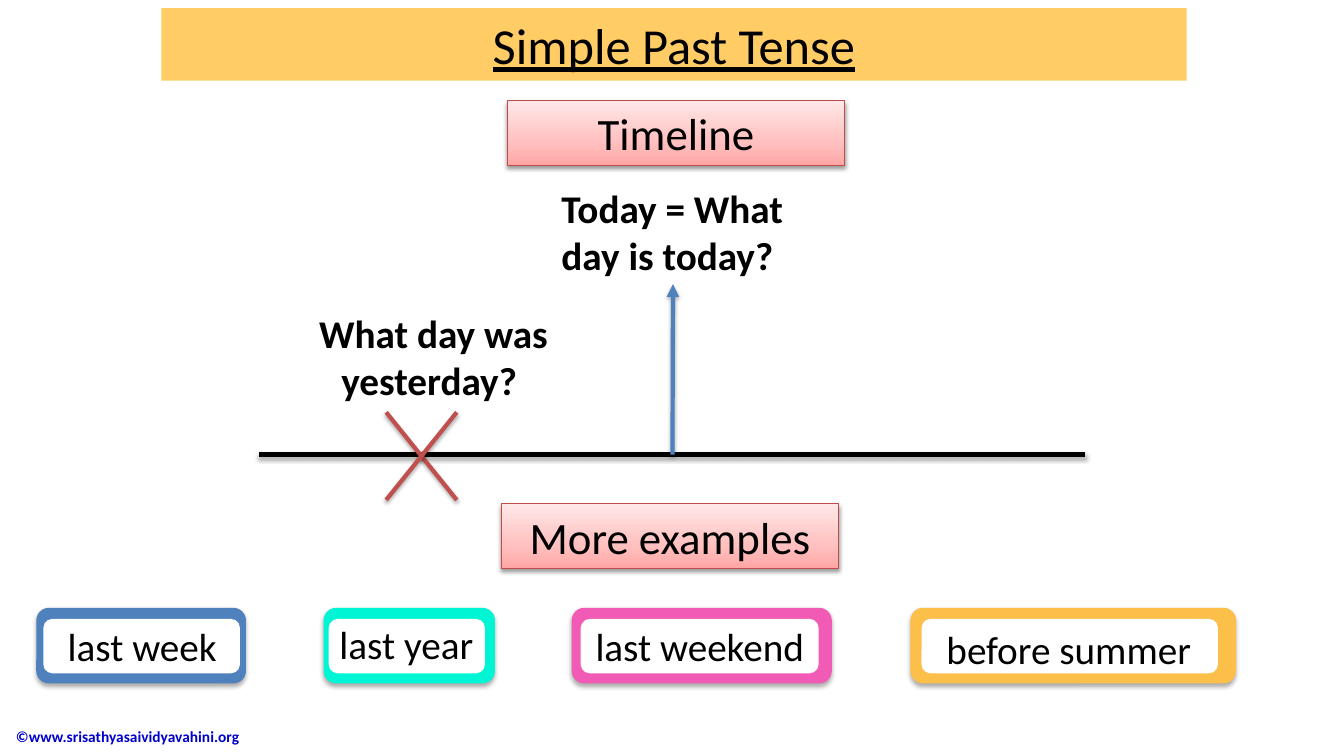
import pptx
import pptx.util
from lxml import etree
from pptx.dml.color import RGBColor
from pptx.enum.dml import MSO_LINE
from pptx.enum.shapes import MSO_CONNECTOR, MSO_SHAPE
from pptx.enum.text import MSO_ANCHOR, PP_ALIGN
from pptx.oxml.ns import qn
from pptx.util import Inches, Pt

BLACK = RGBColor(0x00, 0x00, 0x00)
WHITE = RGBColor(0xFF, 0xFF, 0xFF)
NAVY = RGBColor(0x00, 0x00, 0xCC)
SAND = RGBColor(0xFF, 0xCC, 0x66)
BLUE = RGBColor(0x4F, 0x81, 0xBD)
RED = RGBColor(0xC0, 0x50, 0x4D)
DARK_RED = RGBColor(0xBF, 0x4C, 0x48)
TURQUOISE = RGBColor(0x00, 0xF5, 0xD4)
PINK = RGBColor(0xF1, 0x5B, 0xB5)
AMBER = RGBColor(0xFC, 0xBF, 0x49)
HEADING_STOPS = [
    (0, RGBColor(0xFF, 0xA6, 0xA5)),
    (35, RGBColor(0xFF, 0xC0, 0xBF)),
    (100, RGBColor(0xFF, 0xE7, 0xE7)),
]

# Opacity in percent, blur and distance in points
HEADING_SHADOW = (38, 3.1, 1.6)
LINE_SHADOW = (35, 3.1, 1.8)
CARD_SHADOW = (32, 3.5, 2.2)

COPYRIGHT = "©www.srisathyasaividyavahini.org"
TITLE = "Simple Past Tense"
HEADINGS = [("Timeline", 5.03, 1), ("More examples", 4.97, 5)]
TODAY = "Today = What day is today?"
YESTERDAY = "What day was yesterday? "
# Text, colour, then (left, width) of the frame, the panel and the label, label top
EXAMPLES = [
    ("last week", BLUE, (0.36, 2.08), (0.43, 1.95), (0.39, 2.04), 6.12),
    ("last year", TURQUOISE, (3.21, 1.7), (3.26, 1.55), (3.23, 1.6), 6.1),
    ("last weekend", PINK, (5.67, 2.58), (5.76, 2.36), (5.76, 2.36), 6.12),
    ("before summer", AMBER, (9.03, 3.23), (9.14, 2.94), (9.25, 2.7), 6.15),
]
TIMELINE_Y = 4.51
CROSS_LEFT, CROSS_RIGHT, CROSS_TOP, CROSS_BOTTOM = 3.83, 4.53, 4.09, 4.96


def add_shadow(shape, opacity, blur, distance):
    """Append a downward black shadow; call after fill and line are set."""
    effects = etree.SubElement(shape._element.spPr, qn("a:effectLst"))
    outer = etree.SubElement(
        effects, qn("a:outerShdw"), blurRad=str(Pt(blur)), dist=str(Pt(distance)),
        dir="5400000", rotWithShape="0")
    colour = etree.SubElement(outer, qn("a:srgbClr"), val=str(BLACK))
    etree.SubElement(colour, qn("a:alpha"), val=str(opacity * 1000))


def write(shape, text, size, align=PP_ALIGN.CENTER, anchor=MSO_ANCHOR.TOP,
          colour=BLACK, bold=False, underline=False):
    frame = shape.text_frame
    frame.text = text
    frame.word_wrap = True
    frame.vertical_anchor = anchor
    paragraph = frame.paragraphs[0]
    paragraph.alignment = align
    font = paragraph.runs[0].font
    font.name, font.size, font.color.rgb = "Calibri", Pt(size), colour
    font.bold, font.underline = bold, underline


def add_text(shapes, box, text, size, **style):
    label = shapes.add_textbox(*map(Inches, box))
    write(label, text, size, **style)
    return label


def add_block(shapes, kind, box, fill, shadow=None):
    block = shapes.add_shape(kind, *map(Inches, box))
    block.fill.solid()
    block.fill.fore_color.rgb = fill
    block.line.fill.background()
    if shadow:
        add_shadow(block, *shadow)
    else:
        block.shadow.inherit = False
    return block


def add_heading(shapes, text, left, top):
    heading = shapes.add_shape(
        MSO_SHAPE.RECTANGLE, *map(Inches, (left, top, 3.35, 0.64)))
    heading.fill.gradient()
    heading.fill.gradient_angle = 90
    stops = heading._element.spPr.find(".//" + qn("a:gsLst"))
    for stop in list(stops):
        stops.remove(stop)
    for position, colour in HEADING_STOPS:
        stop = etree.SubElement(stops, qn("a:gs"), pos=str(position * 1000))
        etree.SubElement(stop, qn("a:srgbClr"), val=str(colour))
    heading.line.color.rgb = DARK_RED
    heading.line.width = Pt(0.75)
    add_shadow(heading, *HEADING_SHADOW)
    write(heading, text, 32, anchor=MSO_ANCHOR.MIDDLE)


def add_line(shapes, start, end, colour):
    line = shapes.add_connector(MSO_CONNECTOR.STRAIGHT, *map(Inches, start + end))
    line.line.color.rgb = colour
    line.line.width = Pt(3)
    add_shadow(line, *LINE_SHADOW)
    return line


def add_example(shapes, text, colour, frame, panel, label, label_top):
    card = shapes.add_group_shape().shapes
    rounded = MSO_SHAPE.ROUNDED_RECTANGLE
    add_block(card, rounded, (frame[0], 6.03, frame[1], 0.75), colour, CARD_SHADOW)
    add_block(card, rounded, (panel[0], 6.14, panel[1], 0.54), WHITE)
    add_text(card, (label[0], label_top, label[1], 0.57), text, 28)


def main():
    deck = pptx.Presentation()
    deck.slide_width, deck.slide_height = Inches(13.33), Inches(7.5)
    shapes = deck.slides.add_slide(deck.slide_layouts[6]).shapes

    copyright_line = add_text(
        shapes, (-0.44, 7.1, 4.03, 0.41), COPYRIGHT, 11, align=PP_ALIGN.LEFT,
        anchor=MSO_ANCHOR.MIDDLE, colour=NAVY, bold=True)
    properties = copyright_line.text_frame.paragraphs[0]._p.get_or_add_pPr()
    properties.set("marL", str(Inches(0.5)))

    title = add_block(shapes, MSO_SHAPE.RECTANGLE, (1.6, 0.08, 10.17, 0.72), SAND)
    write(title, TITLE, 36, anchor=MSO_ANCHOR.MIDDLE, underline=True)

    for heading in HEADINGS:
        add_heading(shapes, *heading)

    add_line(shapes, (2.57, TIMELINE_Y), (10.76, TIMELINE_Y), BLACK)
    today = add_text(shapes, (5.47, 1.78, 2.41, 1.04), TODAY, 28,
                     align=PP_ALIGN.LEFT, bold=True)
    for start_y, end_y in ((CROSS_TOP, CROSS_BOTTOM), (CROSS_BOTTOM, CROSS_TOP)):
        add_line(shapes, (CROSS_LEFT, start_y), (CROSS_RIGHT, end_y), RED)

    today_arrow = add_line(shapes, (6.67, TIMELINE_Y), (6.67, 2.82), BLUE)
    today_arrow.end_connect(today, 2)
    etree.SubElement(today_arrow.line._get_or_add_ln(), qn("a:tailEnd"), type="triangle")
    add_text(shapes, (3.03, 3.02, 2.54, 1.04), YESTERDAY, 28, bold=True)

    for example in EXAMPLES:
        add_example(shapes, *example)

    deck.save("out.pptx")


if __name__ == "__main__":
    main()
